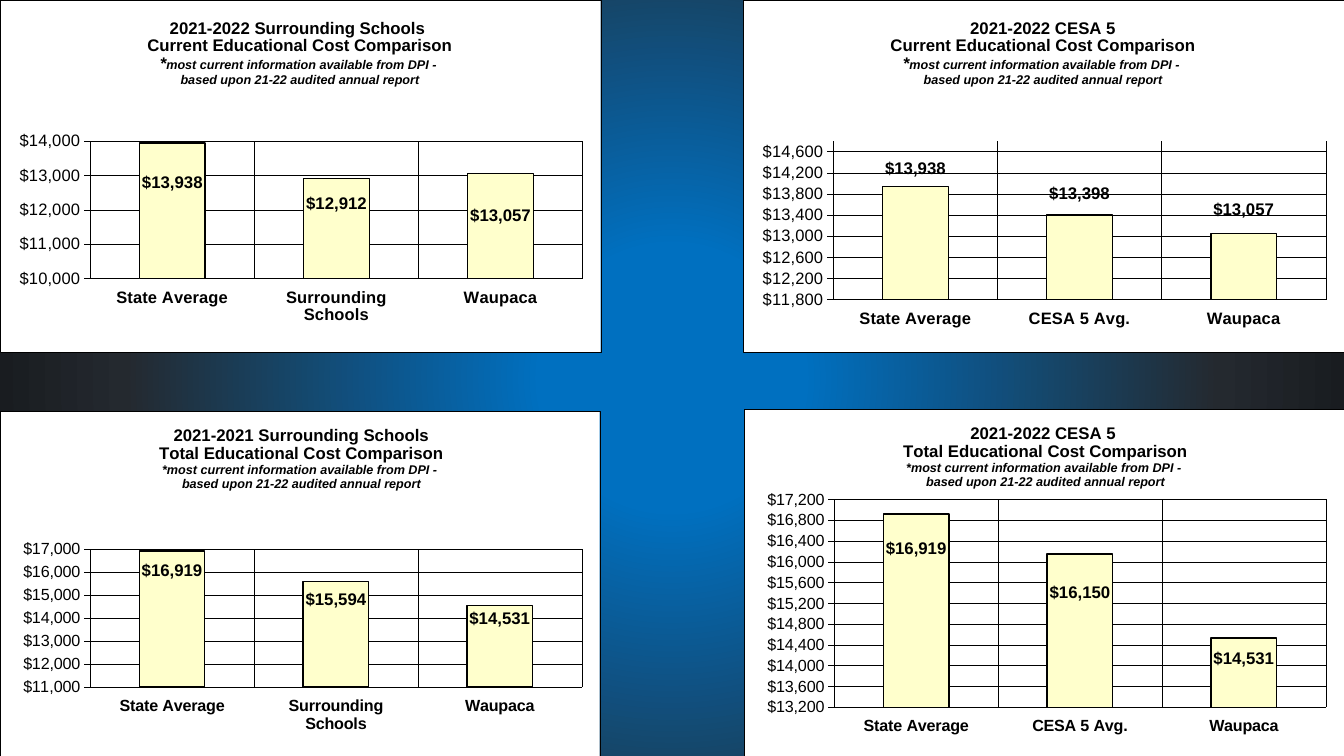
import pptx
import pptx.chart.data
import pptx.dml.color
import pptx.enum.chart
import pptx.oxml
import pptx.oxml.ns
import pptx.util
from pptx.util import Inches

COLORS = {
    "ink": "000000",
    "panel": "FFFFFF",
    "bar": "FFFFCC",
    "glow": "0070C0",
    "slate": "24292F",
    "night": "0F1113",
}
FONT = "Arial"
DOLLARS = '"$"#,##0'
NOTE = ["most current information available from DPI - ",
        "based upon 21-22 audited annual report"]
SURROUNDING = ["State Average", "Surrounding Schools", "Waupaca"]
CESA = ["State Average", "CESA 5 Avg.", "Waupaca"]

# box: left, top, width, height; plot and title: fractions of the chart;
# nudges: label shifts from the middle of each bar; scale: min, max, step
COMPARISONS = [
    dict(box=(0, 0, 5.96, 3.5), text_size=11.8, star_size=12,
         heading=["2021-2022 Surrounding Schools ", "Current Educational Cost Comparison"],
         title_at=(0.24, 0.04), plot=(0.15, 0.4, 0.82, 0.39),
         schools=SURROUNDING, costs=[13938, 12912, 13057], scale=(10000, 14000, 1000),
         nudges=[(0, -0.08), (0, -0.07), (0, -0.03)]),
    dict(box=(0, 4.08, 5.95, 3.42), text_size=11.5, star_size=9,
         heading=["2021-2021 Surrounding Schools", "Total Educational Cost Comparison"],
         title_at=(0.26, 0.03), plot=(0.15, 0.4, 0.82, 0.4),
         schools=SURROUNDING, costs=[16919, 15594, 14531], scale=(11000, 17000, 1000),
         nudges=[(0, -0.14), (0, -0.1), (0, -0.08)]),
    dict(box=(7.37, 0, 5.96, 3.5), text_size=11.8, star_size=12,
         heading=["2021-2022 CESA 5", "Current Educational Cost Comparison"],
         title_at=(0.24, 0.04), plot=(0.15, 0.4, 0.82, 0.45),
         schools=CESA, costs=[13938, 13398, 13057], scale=(11800, 14800, 400),
         nudges=[(0, -0.21), (0, -0.18), (0, -0.16)]),
    dict(box=(7.38, 4.06, 5.95, 3.44), text_size=11.5, star_size=9,
         heading=["2021-2022 CESA 5 ", "Total Educational Cost Comparison"],
         title_at=(0.26, 0.03), plot=(0.15, 0.26, 0.82, 0.6),
         schools=CESA, costs=[16919, 16150, 14531], scale=(13200, 17200, 400),
         nudges=[(0, -0.18), (0, -0.11), (0, -0.04)]),
]


def rgb(name):
    return pptx.dml.color.RGBColor.from_string(COLORS[name])


def style_font(font, size, bold=False, italic=False):
    font.name = FONT
    font.size = pptx.util.Pt(size)
    font.bold = bold
    font.italic = italic
    font.color.rgb = rgb("ink")


def style_line(line, width):
    line.color.rgb = rgb("ink")
    line.width = pptx.util.Pt(width)


def paint_background(slide):
    """Radial gradient spreading from the slide's centre."""
    slide.background.fill.gradient()
    gradient = slide.element.find(".//" + pptx.oxml.ns.qn("a:gradFill"))
    stops = "".join(
        f'<a:gs pos="{percent * 1000}"><a:srgbClr val="{COLORS[name]}"/></a:gs>'
        for percent, name in ((17, "glow"), (71, "slate"), (100, "night")))
    radial = pptx.oxml.parse_xml(
        f'<a:gradFill {pptx.oxml.ns.nsdecls("a")} rotWithShape="1">'
        f'<a:gsLst>{stops}</a:gsLst><a:path path="circle">'
        '<a:fillToRect l="50000" t="50000" r="50000" b="50000"/></a:path></a:gradFill>')
    gradient.getparent().replace(gradient, radial)


def set_layout(parent, index, values, edge=True, inner=False):
    """Place a chart part by x, y and optionally w, h as fractions of the chart."""
    for old in parent.findall(pptx.oxml.ns.qn("c:layout")):
        parent.remove(old)
    target = '<c:layoutTarget val="inner"/>' if inner else ""
    modes = '<c:xMode val="edge"/><c:yMode val="edge"/>' if edge else ""
    sizes = "".join(f'<c:{key} val="{value}"/>' for key, value in zip("xywh", values))
    parent.insert(index, pptx.oxml.parse_xml(
        f'<c:layout {pptx.oxml.ns.nsdecls("c")}><c:manualLayout>'
        f'{target}{modes}{sizes}</c:manualLayout></c:layout>'))


def fill_panel(chart):
    """White chart area with a hairline border."""
    panel = pptx.oxml.parse_xml(
        f'<c:spPr {pptx.oxml.ns.nsdecls("c", "a")}>'
        f'<a:solidFill><a:srgbClr val="{COLORS["panel"]}"/></a:solidFill>'
        f'<a:ln w="3175"><a:solidFill><a:srgbClr val="{COLORS["ink"]}"/></a:solidFill></a:ln>'
        '</c:spPr>')
    chart.element.find(pptx.oxml.ns.qn("c:chart")).addnext(panel)


def write_title(chart, heading, star_size, place):
    frame = chart.chart_title.text_frame
    lines = [[(text, 12, False)] for text in heading]
    lines += [[("*", star_size, True), (NOTE[0], 9, True)], [(NOTE[1], 9, True)]]
    for number, line in enumerate(lines):
        paragraph = frame.paragraphs[0] if number == 0 else frame.add_paragraph()
        for text, size, italic in line:
            run = paragraph.add_run()
            run.text = text
            style_font(run.font, size, True, italic)
    chart.chart_title.include_in_layout = False
    set_layout(chart.element.find(".//" + pptx.oxml.ns.qn("c:title")), 1, place)


def style_axes(chart, text_size, scale):
    for axis, bold in ((chart.category_axis, True), (chart.value_axis, False)):
        axis.has_major_gridlines = True
        style_line(axis.major_gridlines.format.line, 0.25)
        axis.major_tick_mark = pptx.enum.chart.XL_TICK_MARK.OUTSIDE
        axis.minor_tick_mark = pptx.enum.chart.XL_TICK_MARK.NONE
        style_font(axis.tick_labels.font, text_size, bold)
    chart.category_axis.format.line.fill.background()
    cost_axis = chart.value_axis
    style_line(cost_axis.format.line, 0.25)
    cost_axis.minimum_scale, cost_axis.maximum_scale, cost_axis.major_unit = scale
    cost_axis.tick_labels.number_format = DOLLARS
    cost_axis.tick_labels.number_format_is_linked = False


def style_bars(chart):
    plot = chart.plots[0]
    plot.gap_width = 150
    plot.overlap = 100
    plot.vary_by_categories = False
    bars = plot.series[0]
    bars.format.fill.solid()
    bars.format.fill.fore_color.rgb = rgb("bar")
    style_line(bars.format.line, 1)


def place_labels(chart, nudges):
    """Shift each value label from its bar's middle, without leader lines."""
    bars = chart.plots[0].series[0]
    for number in range(len(nudges)):
        style_font(bars.points[number].data_label.font, 12, True)
    group = chart.element.find(".//" + pptx.oxml.ns.qn("c:dLbls"))
    for label, nudge in zip(group.findall(pptx.oxml.ns.qn("c:dLbl")), nudges):
        set_layout(label, 1, nudge, edge=False)
    for leader in group.findall(pptx.oxml.ns.qn("c:showLeaderLines")):
        leader.set("val", "0")
    group.append(pptx.oxml.parse_xml(
        f'<c:extLst {pptx.oxml.ns.nsdecls("c")}>'
        '<c:ext uri="{CE6537A1-D6FC-4f65-9D91-7224C49458BB}" '
        'xmlns:c15="http://schemas.microsoft.com/office/drawing/2012/chart">'
        '<c15:showLeaderLines val="0"/></c:ext></c:extLst>'))


def add_cost_chart(slide, box, text_size, star_size, heading, title_at, plot,
                   schools, costs, scale, nudges):
    data = pptx.chart.data.CategoryChartData(number_format=DOLLARS)
    data.categories = schools
    data.add_series("Series 1", costs)
    chart = slide.shapes.add_chart(
        pptx.enum.chart.XL_CHART_TYPE.COLUMN_STACKED, *map(Inches, box), data).chart
    chart.has_legend = False
    style_font(chart.font, text_size)
    fill_panel(chart)
    write_title(chart, heading, star_size, title_at)
    style_axes(chart, text_size, scale)
    style_bars(chart)
    place_labels(chart, nudges)
    plot_area = chart.element.find(".//" + pptx.oxml.ns.qn("c:plotArea"))
    set_layout(plot_area, 0, plot, inner=True)


def main():
    deck = pptx.Presentation()
    deck.slide_width = Inches(13.33)
    deck.slide_height = Inches(7.5)
    slide = deck.slides.add_slide(deck.slide_layouts[6])
    paint_background(slide)
    for comparison in COMPARISONS:
        add_cost_chart(slide, **comparison)
    deck.save("out.pptx")


if __name__ == "__main__":
    main()
